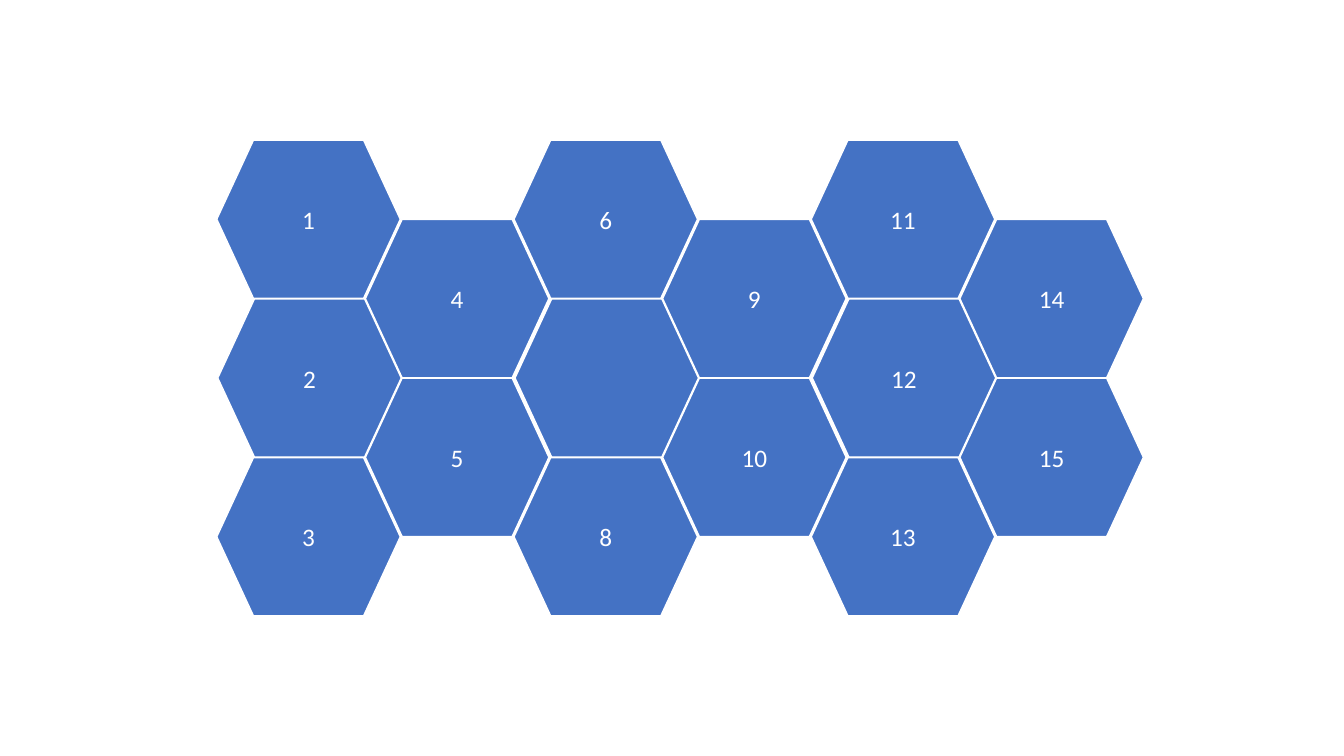
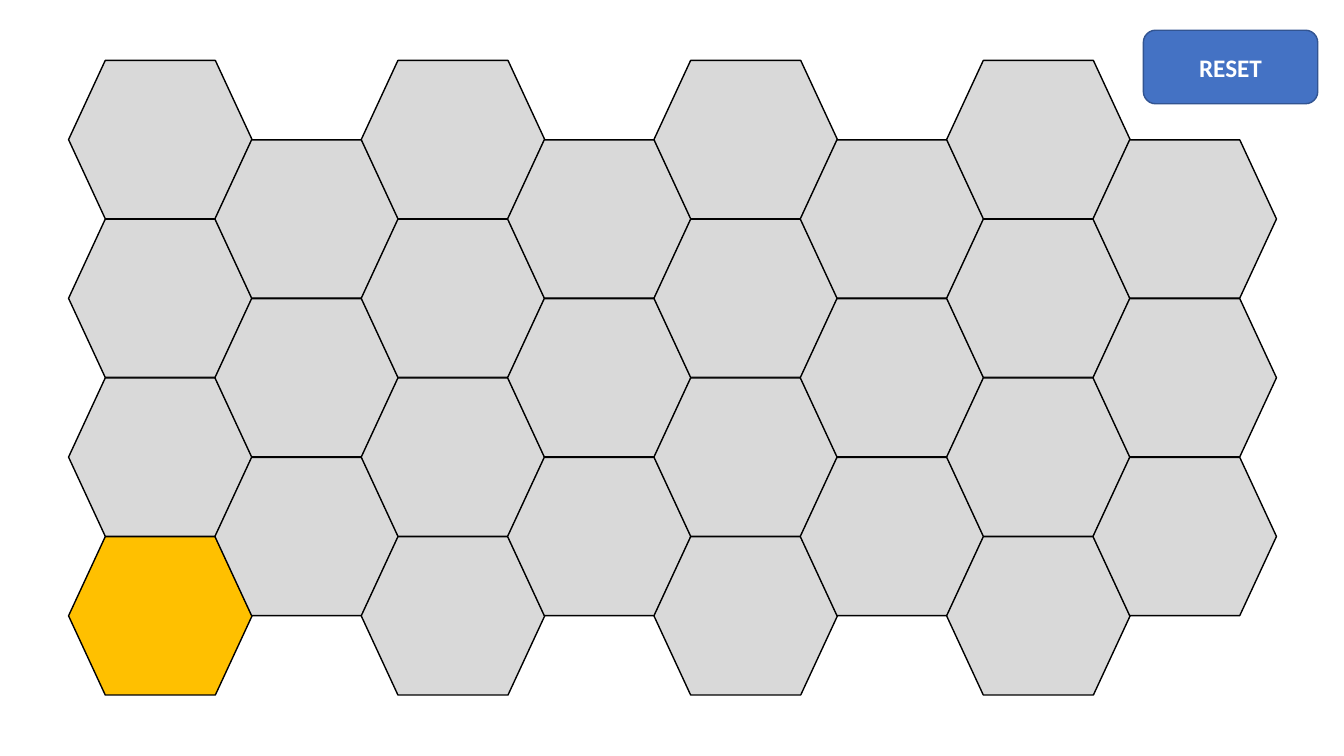
"""Build two honeycomb board slides: a numbered one and a playing one."""
import pptx
import pptx.dml.color
import pptx.enum.shapes
import pptx.enum.text
import pptx.util

Inches = pptx.util.Inches
Pt = pptx.util.Pt
RGB = pptx.dml.color.RGBColor
KIND = pptx.enum.shapes.MSO_SHAPE

BLUE = RGB(0x44, 0x72, 0xC4)
NAVY = RGB(0x32, 0x54, 0x91)
WHITE = RGB(0xFF, 0xFF, 0xFF)
BLACK = RGB(0x00, 0x00, 0x00)
GREY = RGB(0xD9, 0xD9, 0xD9)
GOLD = RGB(0xFF, 0xC0, 0x00)
FONT = "Calibri"

WIDTH, HEIGHT = 1.82, 1.57
ROW = 3.15 / 2

LABELS = [
    ["1", "2", "3"],
    ["4", "5"],
    ["6", "", "8"],
    ["9", "10"],
    ["11", "12", "13"],
    ["14", "15"],
]
FIELD = [[""] * count for count in (4, 3) * 4]
START = (0, 3)
NUDGE = 0.01


def write(shape, text, size=18, bold=False, color=WHITE):
    """Put centred text in a shape."""
    frame = shape.text_frame
    frame.vertical_anchor = pptx.enum.text.MSO_ANCHOR.MIDDLE
    para = frame.paragraphs[0]
    para.alignment = pptx.enum.text.PP_ALIGN.CENTER
    run = para.add_run()
    run.text = text
    run.font.name = FONT
    run.font.size = Pt(size)
    run.font.bold = bold
    run.font.color.rgb = color


def draw(slide, kind, box, fill, line, text="", **style):
    """Add a filled, outlined shape with optional text."""
    shape = slide.shapes.add_shape(kind, *map(Inches, box))
    shape.shadow.inherit = False
    shape.fill.solid()
    shape.fill.fore_color.rgb = fill
    shape.line.color.rgb = line
    shape.line.width = Pt(1)
    if text:
        write(shape, text, **style)


def comb(slide, cells, left, top, step, fill, line, marks=None, nudge=0):
    """Lay out columns of hexagons, every second column half a row lower."""
    marks = marks or {}
    for col, names in enumerate(cells):
        for row, name in enumerate(names):
            shift = nudge if col % 2 == 0 and row % 2 else 0
            box = (left + col * step + shift,
                   top + (row + col % 2 / 2) * ROW, WIDTH, HEIGHT)
            draw(slide, KIND.FLOWCHART_PREPARATION, box,
                 marks.get((col, row), fill), line, name)


def main():
    """Build and save the deck."""
    deck = pptx.Presentation()
    deck.slide_width = Inches(13.33)
    deck.slide_height = Inches(7.5)
    blank = deck.slide_layouts[6]

    board = deck.slides.add_slide(blank)
    comb(board, LABELS, 2.15, 1.39, 7.37 / 5, BLUE, WHITE, nudge=NUDGE)

    game = deck.slides.add_slide(blank)
    comb(game, FIELD, 0.68, 0.6, 10.16 / 7, GREY, BLACK, marks={START: GOLD})
    draw(game, KIND.ROUNDED_RECTANGLE, (11.34, 0.3, 1.73, 0.73),
         BLUE, NAVY, "RESET", bold=True)

    deck.save("out.pptx")


if __name__ == "__main__":
    main()
